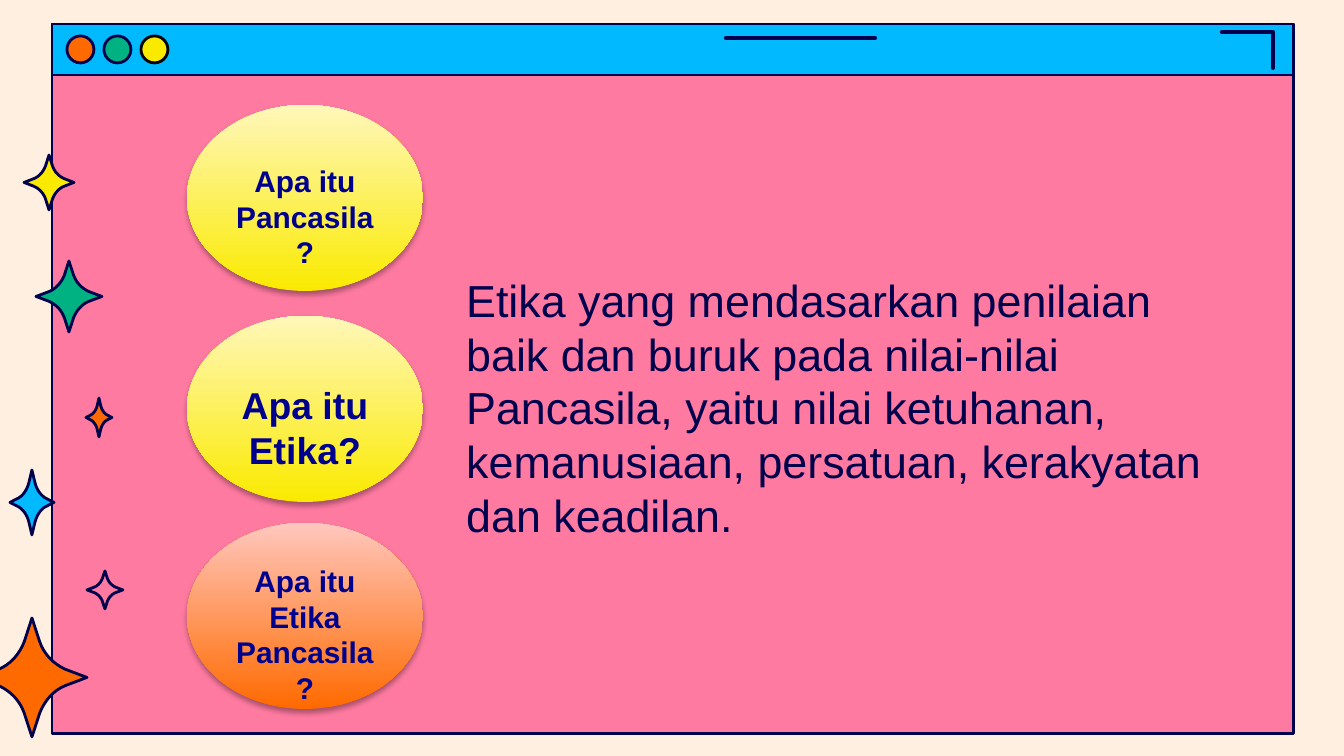
from dataclasses import dataclass

from lxml import etree
from pptx import Presentation
from pptx import util as u
from pptx.dml.color import RGBColor
from pptx.enum import shapes, text
from pptx.oxml.ns import qn

EMU_PER_PX = 914400 / 134.4


def px(value):
    return u.Emu(round(value * EMU_PER_PX))


@dataclass(frozen=True)
class Theme:
    font: str = "Arial"
    cream: str = "FFEFE1"
    pink: str = "FF7AA1"
    blue: str = "00B9FF"
    green: str = "00B181"
    yellow: str = "FAEA00"
    pale_yellow: str = "FFF7BA"
    orange: str = "FF6A00"
    pale_orange: str = "FFC7BD"
    ink: str = "00004D"
    black: str = "000000"
    label: str = "00008E"
    small: int = 16
    medium: int = 20
    large: int = 24
    outline: float = 1.5
    stroke: float = 2.25


def cubic(start, first, second, end, steps=8):
    for step in range(1, steps + 1):
        t = step / steps
        weights = ((1 - t) ** 3, 3 * t * (1 - t) ** 2, 3 * t * t * (1 - t), t ** 3)
        yield tuple(
            sum(weight * point[axis] for weight, point in zip(weights, (start, first, second, end)))
            for axis in (0, 1)
        )


def sparkle_points():
    shoulder = (0.14, -0.6)
    points = []
    arm = [(0, -1), shoulder, *cubic(shoulder, (0.22, -0.39), (0.39, -0.23), (0.6, -0.14))]
    for turn in range(4):
        for x, y in arm:
            for _ in range(turn):
                x, y = -y, x
            points.append((x, y))
    return points


class Board:
    def __init__(self, slide, theme):
        self.slide = slide
        self.theme = theme
        self.background(theme.cream)

    def background(self, color):
        fill = self.slide.background.fill
        fill.solid()
        fill.fore_color.rgb = RGBColor.from_string(color)

    def paint(self, shape, fill=None, line=None, width=None):
        shape.shadow.inherit = False
        if fill:
            shape.fill.solid()
            shape.fill.fore_color.rgb = RGBColor.from_string(fill)
        else:
            shape.fill.background()
        self.ink_line(shape, line or self.theme.ink, width or self.theme.outline)

    def ink_line(self, shape, color, width):
        shape.line.color.rgb = RGBColor.from_string(color)
        shape.line.width = u.Pt(width)
        outline = shape._element.spPr.find(qn("a:ln"))
        outline.set("cap", "rnd")
        etree.SubElement(outline, qn("a:round"))

    def preset(self, kind, left, top, width, height):
        return self.slide.shapes.add_shape(kind, px(left), px(top), px(width), px(height))

    def panel(self, left, top, width, height, fill):
        self.paint(self.preset(shapes.MSO_SHAPE.RECTANGLE, left, top, width, height), fill)

    def dot(self, left, top, size, fill, line):
        self.paint(self.preset(shapes.MSO_SHAPE.OVAL, left, top, size, size), fill, line)

    def outline(self, points, closed, **paint):
        corners = [(px(x), px(y)) for x, y in points]
        builder = self.slide.shapes.build_freeform(*corners[0])
        builder.add_line_segments(corners[1:], close=closed)
        self.paint(builder.convert_to_shape(), **paint)

    def sparkle(self, left, top, width, height, fill):
        points = [
            (left + width * (1 + x) / 2, top + height * (1 + y) / 2)
            for x, y in sparkle_points()
        ]
        self.outline(points, True, fill=fill)

    def stroke(self, x1, y1, x2, y2):
        line = self.slide.shapes.add_connector(
            shapes.MSO_CONNECTOR.STRAIGHT, px(x1), px(y1), px(x2), px(y2)
        )
        self.ink_line(line, self.theme.ink, self.theme.stroke)
        etree.SubElement(line._element.spPr, qn("a:effectLst"))

    def set_words(self, frame, paragraphs, frame_format, font_format, color, align):
        for name, value in frame_format.items():
            setattr(frame, name, value)
        for index, words in enumerate(paragraphs):
            paragraph = frame.paragraphs[0] if index == 0 else frame.add_paragraph()
            paragraph.alignment = align
            run = paragraph.add_run()
            run.text = words
            for name, value in font_format.items():
                setattr(run.font, name, value)
            run.font.color.rgb = RGBColor.from_string(color)

    def bubble(self, left, top, width, height, colors, paragraphs, size):
        bubble = self.preset(shapes.MSO_SHAPE.OVAL, left, top, width, height)
        bubble.line.fill.background()
        bubble.fill.gradient()
        bubble.fill.gradient_angle = 90
        for stop, position, color in zip(bubble.fill.gradient_stops, (0, 1), colors):
            stop.position = position
            stop.color.rgb = RGBColor.from_string(color)
        self.drop_shadow(bubble)
        frame_format = dict(
            word_wrap=True, vertical_anchor=text.MSO_ANCHOR.MIDDLE, margin_top=px(43)
        )
        font_format = dict(name=self.theme.font, size=u.Pt(size), bold=True)
        self.set_words(bubble.text_frame, paragraphs, frame_format, font_format,
                       self.theme.label, text.PP_ALIGN.CENTER)

    def drop_shadow(self, shape):
        shape.shadow.inherit = False
        effects = shape._element.spPr.find(qn("a:effectLst"))
        shadow = etree.SubElement(effects, qn("a:outerShdw"), blurRad=str(u.Pt(3.1)),
                                  dist=str(u.Pt(1.8)), dir="5400000", rotWithShape="0")
        color = etree.SubElement(shadow, qn("a:srgbClr"), val=self.theme.black)
        etree.SubElement(color, qn("a:alpha"), val="35000")

    def body(self, left, top, width, height, words):
        box = self.slide.shapes.add_textbox(px(left), px(top), px(width), px(height))
        frame_format = dict(word_wrap=True, auto_size=text.MSO_AUTO_SIZE.SHAPE_TO_FIT_TEXT)
        font_format = dict(name=self.theme.font, size=u.Pt(self.theme.large))
        self.set_words(box.text_frame, [words], frame_format, font_format,
                       self.theme.ink, text.PP_ALIGN.LEFT)


def main():
    deck = Presentation()
    deck.slide_width, deck.slide_height = px(1344), px(756)
    theme = Theme()
    board = Board(deck.slides.add_slide(deck.slide_layouts[6]), theme)

    board.panel(52, 24, 1242, 710, theme.pink)
    board.panel(52, 24, 1242, 51, theme.blue)
    board.outline([(1222, 32), (1273, 32), (1273, 68)], False, width=theme.stroke)
    board.stroke(726, 38, 875, 38)

    buttons = [(theme.orange, theme.ink), (theme.green, theme.ink), (theme.yellow, theme.black)]
    for index, (fill, line) in enumerate(buttons):
        board.dot(67 + 37 * index, 36, 27, fill, line)

    for sparkle in [
        (10, 470, 44, 65, theme.blue),
        (87, 571, 36, 38, None),
        (-23, 618, 110, 119, theme.orange),
        (36, 261, 66, 71, theme.green),
        (86, 398, 26, 39, theme.orange),
        (24, 155, 50, 55, theme.yellow),
    ]:
        board.sparkle(*sparkle)

    sunny = (theme.yellow, theme.pale_yellow)
    warm = (theme.orange, theme.pale_orange)
    for top, colors, question, size in [
        (105, sunny, ["Apa itu Pancasila?"], theme.small),
        (316, sunny, ["Apa itu Etika?"], theme.medium),
        (523, warm, ["Apa itu", "Etika Pancasila?"], theme.small),
    ]:
        board.bubble(187, top, 236, 186, colors, question, size)

    board.body(453, 266, 800, 285,
               "Etika yang mendasarkan penilaian baik dan buruk pada nilai-nilai Pancasila, "
               "yaitu nilai ketuhanan, kemanusiaan, persatuan, kerakyatan dan keadilan.")
    deck.save("out.pptx")


if __name__ == "__main__":
    main()
